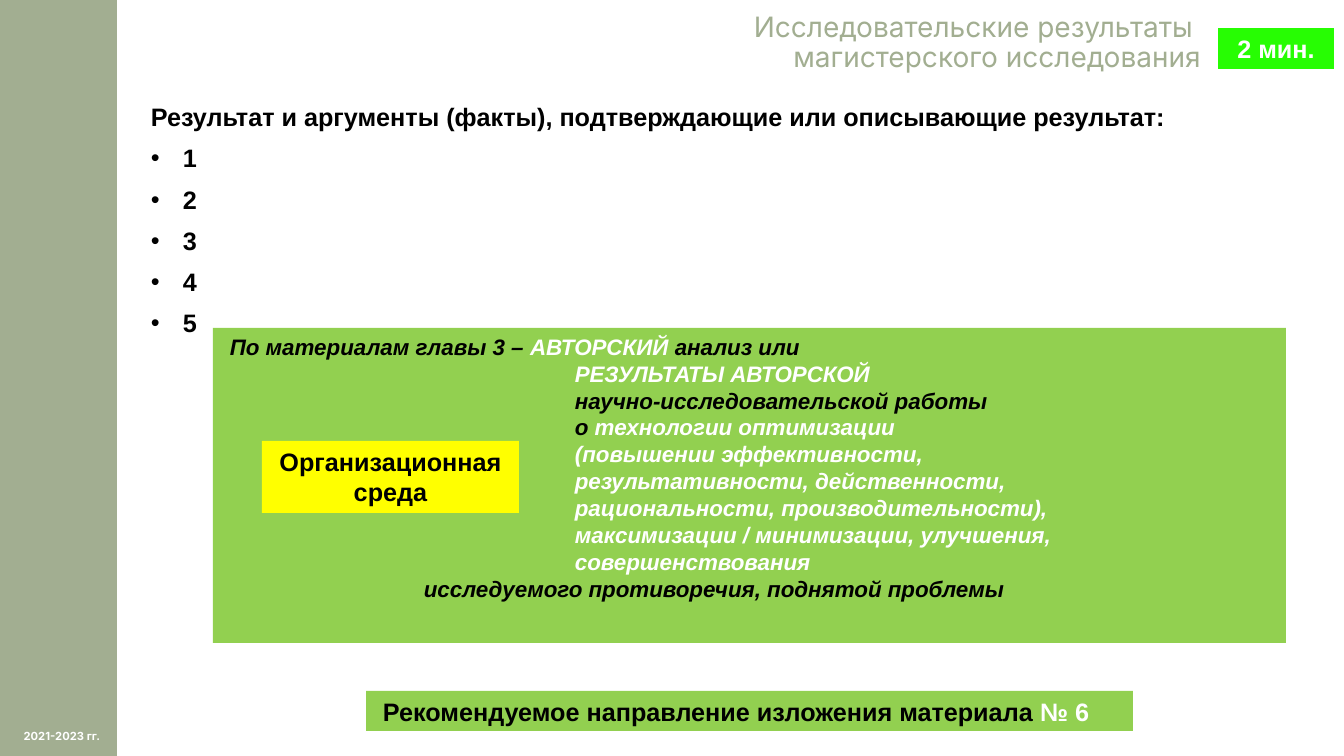
from lxml.etree import SubElement
from pptx import Presentation
from pptx.dml.color import RGBColor
from pptx.enum.shapes import MSO_SHAPE
from pptx.enum.text import MSO_ANCHOR, MSO_AUTO_SIZE, PP_ALIGN
from pptx.oxml.ns import qn
from pptx.util import Emu, Pt

SAGE = RGBColor(0xA2, 0xAE, 0x91)
GREEN = RGBColor(0x92, 0xD0, 0x50)
LIME = RGBColor(0x27, 0xFD, 0x03)
YELLOW = RGBColor(0xFF, 0xFF, 0x00)
WHITE = RGBColor(0xFF, 0xFF, 0xFF)
BLACK = RGBColor(0, 0, 0)

TITLE = "Исследовательские результаты \nмагистерского исследования"
YEARS = "2021-2023 гг."
HEADING = "Результат и аргументы (факты), подтверждающие или описывающие результат:"
RESULTS = ["1", "2", "3", "4", "5"]
TIMING = [(0, [("2 мин.", WHITE)])]
ENVIRONMENT = [(0, [("Организационная среда", BLACK)])]
DIRECTION = [(7, [("Рекомендуемое направление изложения материала ", BLACK), ("№ 6", WHITE)])]
CHAPTER = [
    (7, [("По материалам главы 3 – ", BLACK), ("АВТОРСКИЙ", WHITE), (" анализ или", BLACK)]),
    (352, [("РЕЗУЛЬТАТЫ АВТОРСКОЙ", WHITE)]),
    (352, [("научно-исследовательской работы", BLACK)]),
    (352, [("о ", BLACK), ("технологии оптимизации", WHITE)]),
    (352, [("(повышении эффективности,", WHITE)]),
    (352, [("результативности, действенности,", WHITE)]),
    (352, [("рациональности, производительности),", WHITE)]),
    (352, [("максимизации / минимизации, улучшения,", WHITE)]),
    (352, [("совершенствования", WHITE)]),
    (201, [("исследуемого противоречия, поднятой проблемы", BLACK)]),
]
PANELS = [
    ((213, 328, 1073, 315), GREEN, CHAPTER, 16, True, PP_ALIGN.LEFT),
    ((262, 441, 257, 72), YELLOW, ENVIRONMENT, 18, False, PP_ALIGN.CENTER),
    ((1218, 28, 116, 41), LIME, TIMING, 18, False, PP_ALIGN.CENTER),
    ((366, 691, 767, 40), GREEN, DIRECTION, 18, False, PP_ALIGN.LEFT),
]


def px(length):
    return Emu(round(length * 914400 / 100.8))


def style(run, size, color, name="Arial", bold=True, italic=False):
    font = run.font
    font.size, font.name, font.bold, font.italic = Pt(size), name, bold, italic
    font.color.rgb = color


def add_block(shapes, box, fill):
    block = shapes.add_shape(MSO_SHAPE.RECTANGLE, *map(px, box))
    block.shadow.inherit = False
    block.fill.solid()
    block.fill.fore_color.rgb = fill
    block.line.fill.background()
    return block


def add_text(shapes, box, anchor):
    frame = shapes.add_textbox(*map(px, box)).text_frame
    frame.word_wrap = True
    frame.vertical_anchor = anchor
    return frame


def add_panel(shapes, box, fill, lines, size, italic, align):
    frame = add_block(shapes, box, fill).text_frame
    frame.word_wrap = True
    frame.vertical_anchor = MSO_ANCHOR.TOP
    for number, (indent, pieces) in enumerate(lines):
        paragraph = frame.add_paragraph() if number else frame.paragraphs[0]
        paragraph.alignment = align
        paragraph._p.get_or_add_pPr().set("marL", str(px(indent)))
        for words, color in pieces:
            run = paragraph.add_run()
            run.text = words
            style(run, size, color, italic=italic)


def add_results(shapes):
    frame = add_text(shapes, (141, 100, 1175, 586), MSO_ANCHOR.TOP)
    frame.text = "\n".join([HEADING, *RESULTS])
    for number, paragraph in enumerate(frame.paragraphs):
        paragraph.line_spacing = 0.9
        if number:
            paragraph.space_before = Pt(10)
            properties = paragraph._p.get_or_add_pPr()
            properties.set("marL", str(px(32)))
            properties.set("indent", str(-px(32)))
            SubElement(properties, qn("a:buFont")).set("typeface", "Arial")
            SubElement(properties, qn("a:buChar")).set("char", "•")
        style(paragraph.runs[0], 18, BLACK)


def format_title(title):
    title.left, title.top, title.width, title.height = map(px, (126, 13, 1075, 71))
    frame = title.text_frame
    frame.text = TITLE
    frame.auto_size = MSO_AUTO_SIZE.NONE
    frame.word_wrap = True
    frame.vertical_anchor = MSO_ANCHOR.TOP
    frame.margin_left = frame.margin_right = frame.margin_top = frame.margin_bottom = 0
    for paragraph in frame.paragraphs:
        paragraph.alignment = PP_ALIGN.RIGHT
        paragraph.line_spacing = 0.9
        paragraph.space_before = Pt(0)
        style(paragraph.runs[0], 20, SAGE, "Inter", bold=False)


def main():
    """Build the slide on the research results of a master's thesis."""
    deck = Presentation()
    deck.slide_width, deck.slide_height = px(1344), px(756)
    slide = deck.slides.add_slide(deck.slide_layouts[5])
    shapes = slide.shapes
    format_title(shapes.title)
    add_block(shapes, (0, 0, 117, 756), SAGE)
    years = add_text(shapes, (7, 715, 110, 41), MSO_ANCHOR.MIDDLE)
    years.text = YEARS
    years.paragraphs[0].alignment = PP_ALIGN.CENTER
    style(years.paragraphs[0].runs[0], 8, WHITE, "Inter")
    add_results(shapes)
    for panel in PANELS:
        add_panel(shapes, *panel)
    deck.save("out.pptx")


if __name__ == "__main__":
    main()
